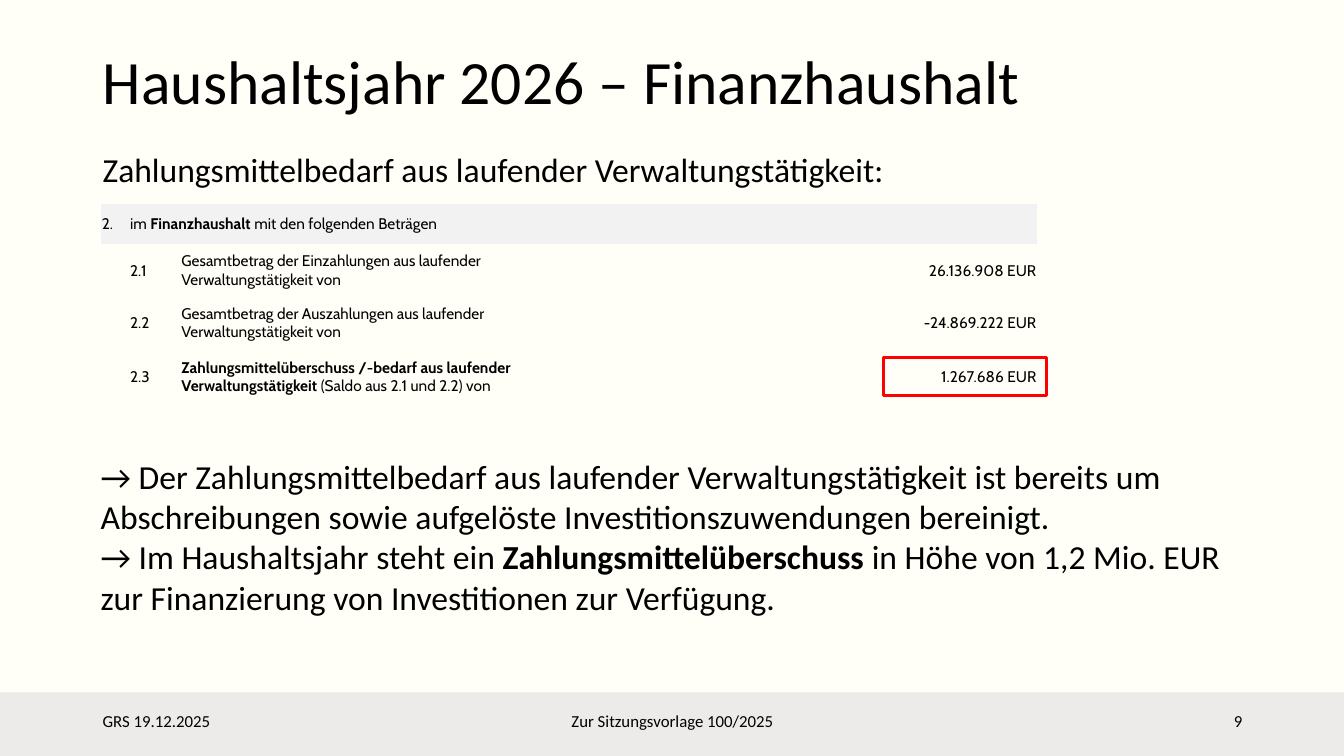
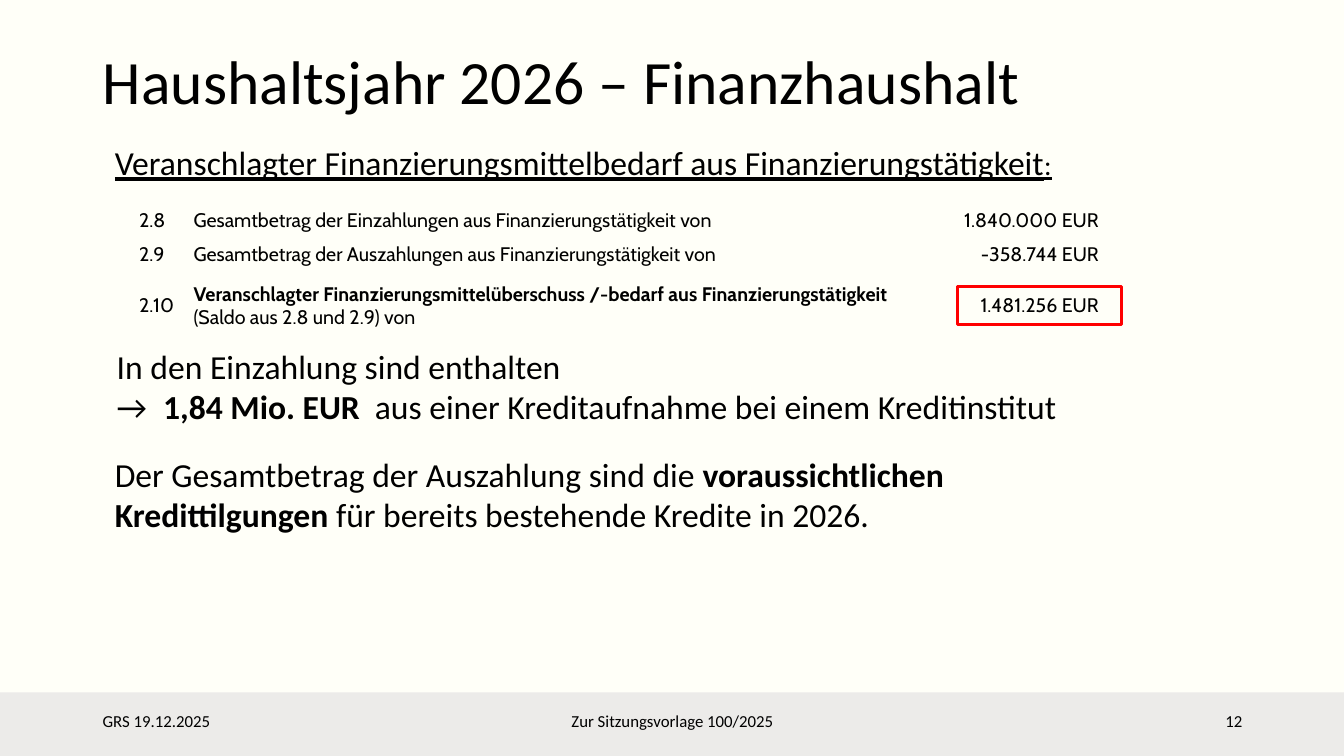
from dataclasses import dataclass

from lxml import etree
from pptx import Presentation
from pptx import util as u
from pptx.dml.color import RGBColor
from pptx.enum import shapes, text
from pptx.oxml.ns import qn

I = u.Inches
LEFT, CENTER, RIGHT = text.PP_ALIGN.LEFT, text.PP_ALIGN.CENTER, text.PP_ALIGN.RIGHT
TOP, MIDDLE = text.MSO_ANCHOR.TOP, text.MSO_ANCHOR.MIDDLE


@dataclass(frozen=True)
class Theme:
    paper: RGBColor = RGBColor.from_string("FFFFF8")
    ink: RGBColor = RGBColor.from_string("000000")
    band: RGBColor = RGBColor.from_string("E7E6E6")
    band_alpha: int = 78
    header: RGBColor = RGBColor.from_string("F2F2F2")
    accent: RGBColor = RGBColor.from_string("FF0000")
    body_font: str = "Calibri"
    table_font: str = "Cabin"
    title_size: int = 44
    body_size: int = 24
    colon_size: int = 20
    footer_size: int = 12


T = Theme()
WIDTH, HEIGHT = 13.33, 7.5
MARGIN, CONTENT = 0.92, 11.5
NO_GRID_STYLE = "{2D5ABB26-0587-4C30-8999-92F81FD0307C}"
BOLD = {"bold": True}


# Text
def add_runs(p, runs, size, font):
    """Each run is a string or a pair of string and font settings."""
    for run in runs:
        words, style = (run, {}) if isinstance(run, str) else run
        r = p.add_run()
        r.text = words
        r.font.name, r.font.size = font, u.Pt(style.get("size", size))
        r.font.color.rgb = T.ink
        r.font.bold = style.get("bold", False)
        r.font.underline = style.get("underline", False)


def fill_text(tf, paragraphs, size, font=T.body_font, align=LEFT, tabs=()):
    for i, runs in enumerate(paragraphs):
        p = tf.paragraphs[0] if i == 0 else tf.add_paragraph()
        p.alignment = align
        if tabs:
            tab_list = etree.SubElement(p._p.get_or_add_pPr(), qn("a:tabLst"))
            for pos in tabs:
                etree.SubElement(tab_list, qn("a:tab"), pos=str(I(pos)), algn="l")
        add_runs(p, runs, size, font)


def add_text(s, box, paragraphs, size=T.body_size, align=LEFT, anchor=TOP, tabs=()):
    tf = s.shapes.add_textbox(*map(I, box)).text_frame
    tf.word_wrap = True
    tf.vertical_anchor = anchor
    fill_text(tf, paragraphs, size, align=align, tabs=tabs)


# Shared frame: footer band, title, footer texts
def add_footer(s, box, number):
    x, y, w, h = box
    band = s.shapes.add_shape(shapes.MSO_SHAPE.RECTANGLE, *map(I, box))
    band.shadow.inherit = False
    band.fill.solid()
    band.fill.fore_color.rgb = T.band
    band.line.fill.background()
    color = band._element.spPr.find(qn("a:solidFill"))[0]
    etree.SubElement(color, qn("a:alpha"), val=str(T.band_alpha * 1000))
    parts = [(MARGIN, 3, "GRS 19.12.2025", LEFT),
             (4.42, 4.5, "Zur Sitzungsvorlage 100/2025", CENTER),
             (9.42, 3, str(number), RIGHT)]
    for left, width, words, align in parts:
        add_text(s, (x + left, y + 0.08, width, 0.4), [[words]],
                 T.footer_size, align, MIDDLE)


def add_title(s, box, words):
    title = s.shapes.title
    title.left, title.top, title.width, title.height = map(I, box)
    tf = title.text_frame
    tf.word_wrap = True
    tf.auto_size = text.MSO_AUTO_SIZE.NONE
    tf.vertical_anchor = MIDDLE
    fill_text(tf, [[words]], T.title_size)
    tf.paragraphs[0].line_spacing = 0.9


def new_slide(prs, number):
    s = prs.slides.add_slide(prs.slide_layouts[5])
    add_footer(s, (0, 6.87, WIDTH, 0.63), number)
    add_title(s, (MARGIN, 0.4, CONTENT, 0.87), "Haushaltsjahr 2026 – Finanzhaushalt")
    return s


# Budget table; a None cell joins the cell to its left
def add_budget(s, origin, cols, heights, rows, size, frame_left, header=False):
    x, y = origin
    frame = s.shapes.add_table(len(rows), len(cols), I(x), I(y),
                               I(sum(cols)), I(sum(heights)))
    table = frame.table
    table.first_row = table.horz_banding = False
    table._tbl.tblPr.find(qn("a:tableStyleId")).text = NO_GRID_STYLE
    for column, width in zip(table.columns, cols):
        column.width = I(width)
    for i, (height, row) in enumerate(zip(heights, rows)):
        table.rows[i].height = I(height)
        for j, paragraphs in enumerate(row):
            cell = table.cell(i, j)
            cell.margin_left = cell.margin_right = cell.margin_top = I(0.01)
            cell.margin_bottom = 0
            cell.vertical_anchor = MIDDLE
            if header and i == 0:
                cell.fill.solid()
                cell.fill.fore_color.rgb = T.header
            else:
                cell.fill.background()
            if paragraphs is None:
                table.cell(i, j - 1).merge(cell)
            else:
                fill_text(cell.text_frame, paragraphs, size, T.table_font,
                          RIGHT if j == len(cols) - 1 else LEFT)
    # Red frame around the result, centred on the last row
    w, h = 1.62, 0.38
    top = y + sum(heights) - (heights[-1] + h) / 2
    sp = s.shapes.add_shape(shapes.MSO_SHAPE.RECTANGLE, *map(I, (frame_left, top, w, h)))
    sp.shadow.inherit = False
    sp.fill.background()
    sp.line.color.rgb = T.accent
    sp.line.width = u.Pt(2)


def item(number, label, amount):
    return [[], [[number]], label, [[amount]]]


# Slides
def operating_slide(prs):
    s = new_slide(prs, 9)
    add_text(s, (MARGIN, 1.43, 8.91, 0.5),
             [["Zahlungsmittelbedarf aus laufender Verwaltungstätigkeit:"]])
    rows = [
        [[["2."]], [["im ", ("Finanzhaushalt", BOLD), " mit den folgenden Beträgen"]],
         None, []],
        item("2.1", [["Gesamtbetrag der Einzahlungen aus laufender"],
                     ["Verwaltungstätigkeit von"]], "26.136.908 EUR"),
        item("2.2", [["Gesamtbetrag der Auszahlungen aus laufender"],
                     ["Verwaltungstätigkeit von"]], "-24.869.222 EUR"),
        item("2.3", [[("Zahlungsmittelüberschuss /-bedarf aus laufender", BOLD)],
                     [("Verwaltungstätigkeit ", BOLD), "(Saldo aus 2.1 und 2.2) von"]],
             "1.267.686 EUR"),
    ]
    add_budget(s, (1, 2.02), (0.28, 0.51, 6.53, 1.97), (0.4, 0.52, 0.52, 0.55),
               rows, 11, 8.76, header=True)
    add_text(s, (0.9, 4.47, 11.43, 1.72), [
        ["→ Der Zahlungsmittelbedarf aus laufender Verwaltungstätigkeit ist bereits um "
         "Abschreibungen sowie aufgelöste Investitionszuwendungen bereinigt."],
        ["→ Im Haushaltsjahr steht ein ", ("Zahlungsmittelüberschuss", BOLD),
         " in Höhe von 1,2 Mio. EUR zur Finanzierung von Investitionen zur Verfügung."],
    ])


def financing_slide(prs):
    s = new_slide(prs, 12)
    add_text(s, (1.04, 1.36, 10.75, 0.5), [[
        ("Veranschlagter Finanzierungsmittelbedarf aus Finanzierungstätigkeit",
         {"underline": True}),
        (":", {"underline": True, "size": T.colon_size})]])
    rows = [
        item("2.8", [["Gesamtbetrag der Einzahlungen aus Finanzierungstätigkeit von"]],
             "1.840.000 EUR"),
        item("2.9", [["Gesamtbetrag der Auszahlungen aus Finanzierungstätigkeit von"]],
             "-358.744 EUR"),
        item("2.10", [[("Veranschlagter Finanzierungsmittelüberschuss /-bedarf aus "
                        "Finanzierungstätigkeit ", BOLD), "(Saldo aus 2.8 und 2.9) von"]],
             "1.481.256 EUR"),
    ]
    add_budget(s, (1.08, 2.02), (0.29, 0.54, 6.91, 2.09), (0.33, 0.33, 0.7),
               rows, 14, 9.5)
    add_text(s, (1.06, 3.38, 10.8, 0.91), [
        ["In den Einzahlung sind enthalten"],
        ["→\t", ("1,84 Mio. EUR", BOLD),
         "\taus einer Kreditaufnahme bei einem Kreditinstitut"],
    ], tabs=(0.46, 2.56))
    add_text(s, (1.04, 4.45, 9.89, 0.91), [[
        "Der Gesamtbetrag der Auszahlung sind die ",
        ("voraussichtlichen Kredittilgungen", BOLD),
        " für bereits bestehende Kredite in 2026."]])


def main():
    prs = Presentation()
    prs.slide_width, prs.slide_height = I(WIDTH), I(HEIGHT)
    background = prs.slide_master.background.fill
    background.solid()
    background.fore_color.rgb = T.paper
    operating_slide(prs)
    financing_slide(prs)
    prs.save("out.pptx")


if __name__ == "__main__":
    main()
